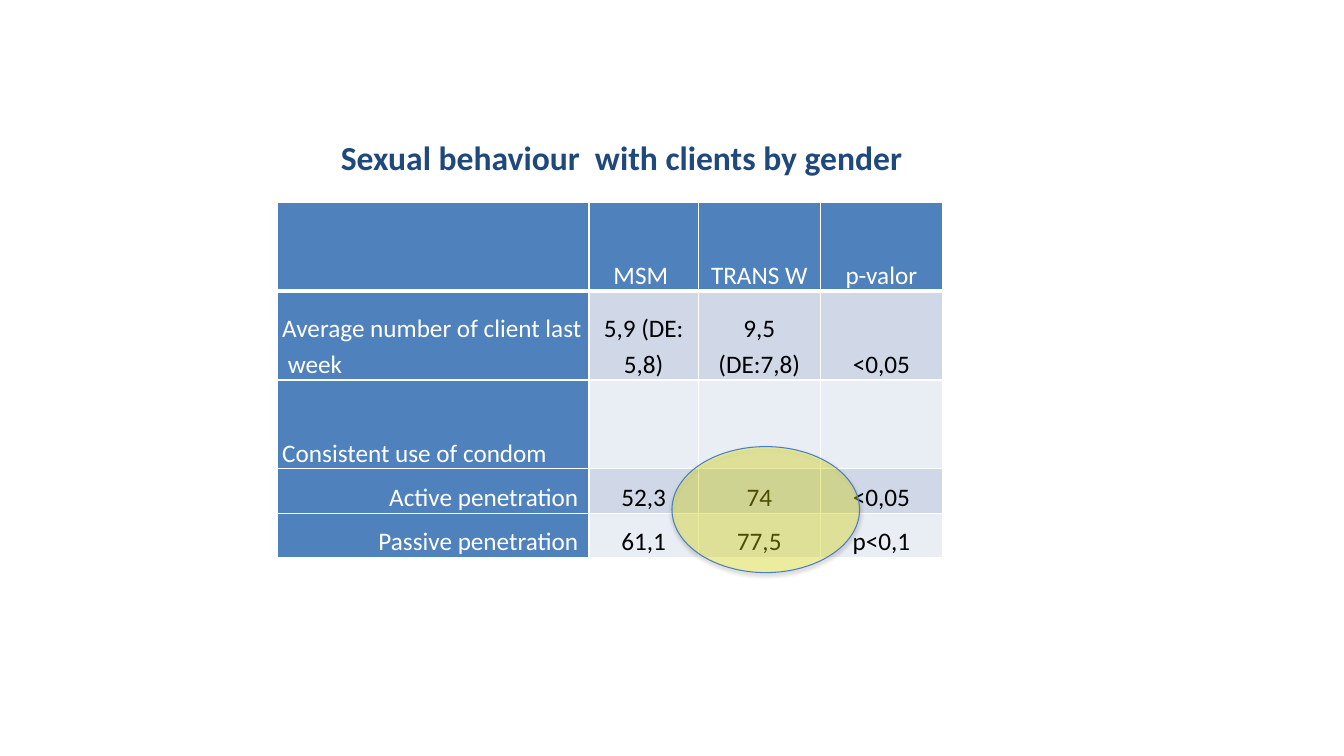
from lxml import etree
from pptx import Presentation
from pptx.dml.color import RGBColor
from pptx.enum import shapes, text
from pptx.oxml import ns
from pptx.util import Pt

WHITE = RGBColor(0xFF, 0xFF, 0xFF)
BLACK = RGBColor(0, 0, 0)
NAVY = RGBColor(0x1F, 0x49, 0x7D)
BLUE = RGBColor(0x4F, 0x81, 0xBD)
BAND_DARK = RGBColor(0xD0, 0xD8, 0xE8)
BAND_LIGHT = RGBColor(0xE9, 0xED, 0xF4)
YELLOW = RGBColor(0xFF, 0xFF, 0)
OUTLINE = RGBColor(0x4B, 0x7E, 0xBC)
LEFT, CENTER, RIGHT = text.PP_ALIGN.LEFT, text.PP_ALIGN.CENTER, text.PP_ALIGN.RIGHT


def write(frame, words, size=18, color=BLACK, bold=False, align=CENTER, spacing=1.0):
    paragraph = frame.paragraphs[0]
    paragraph.alignment = align
    paragraph.line_spacing = spacing
    run = paragraph.add_run()
    run.text = words
    run.font.name = "Calibri"
    run.font.size = Pt(size)
    run.font.bold = bold
    run.font.color.rgb = color


def add_color(parent, color, alpha=None):
    """Append an srgbClr element, with alpha in percent."""
    node = etree.SubElement(parent, ns.qn("a:srgbClr"), val=str(color))
    if alpha is not None:
        etree.SubElement(node, ns.qn("a:alpha"), val=str(alpha * 1000))


deck = Presentation()
deck.slide_width, deck.slide_height = Pt(960), Pt(540)
slide = deck.slides.add_slide(deck.slide_layouts[5])

title = slide.shapes.title
title.left, title.top, title.width, title.height = Pt(152), Pt(94.5), Pt(584), Pt(36)
title.text_frame.word_wrap = True
title.text_frame.auto_size = text.MSO_AUTO_SIZE.NONE
title.text_frame.vertical_anchor = text.MSO_ANCHOR.MIDDLE
write(title.text_frame, "Sexual behaviour  with clients by gender", size=24, color=NAVY, bold=True)

rows = [
    ["", "MSM ", "TRANS W", "p-valor"],
    ["Average number of client last  week", "5,9 (DE: 5,8)", "9,5 (DE:7,8)", "<0,05"],
    ["Consistent use of condom", "", "", ""],
    ["Active penetration ", "52,3", "74", "<0,05"],
    ["Passive penetration ", "61,1", "77,5", "p<0,1"],
]
label_aligns = [LEFT, LEFT, LEFT, RIGHT, RIGHT]
column_widths = [222.8, 78, 87.2, 87.2]
row_heights = [63.4, 63.4, 63.4, 31.7, 31.7]

behaviour = slide.shapes.add_table(
    len(rows), len(column_widths), Pt(198), Pt(144.7), Pt(sum(column_widths)), Pt(sum(row_heights))
).table
behaviour.first_row = behaviour.horz_banding = False
for column, width in zip(behaviour.columns, column_widths):
    column.width = Pt(width)

for r, values in enumerate(rows):
    behaviour.rows[r].height = Pt(row_heights[r])
    for c, value in enumerate(values):
        cell = behaviour.cell(r, c)
        heading = r == 0 or c == 0
        cell.margin_left = cell.margin_right = Pt(3.6)
        cell.margin_top = cell.margin_bottom = Pt(0)
        cell.vertical_anchor = text.MSO_ANCHOR.BOTTOM
        if value:
            write(cell.text_frame, value, color=WHITE if heading else BLACK,
                  align=label_aligns[r] if c == 0 else CENTER, spacing=1.15)
        for side in ("lnL", "lnR", "lnT", "lnB"):
            weight = 3 if r == 0 and side == "lnB" else 1
            border = etree.SubElement(cell._tc.get_or_add_tcPr(), ns.qn("a:" + side), w=str(Pt(weight)))
            add_color(etree.SubElement(border, ns.qn("a:solidFill")), WHITE)
        cell.fill.solid()
        cell.fill.fore_color.rgb = BLUE if heading else BAND_DARK if r % 2 else BAND_LIGHT

highlight = slide.shapes.add_shape(shapes.MSO_SHAPE.OVAL, Pt(480), Pt(319), Pt(134), Pt(90))
highlight.fill.solid()
highlight.fill.fore_color.rgb = YELLOW
fill_color = highlight._element.spPr.find(ns.qn("a:solidFill"))[0]
etree.SubElement(fill_color, ns.qn("a:alpha"), val="30000")
highlight.line.color.rgb = OUTLINE
highlight.line.width = Pt(0.75)
highlight.shadow.inherit = False
effects = highlight._element.spPr.find(ns.qn("a:effectLst"))
shadow = etree.SubElement(effects, ns.qn("a:outerShdw"), blurRad=str(Pt(3.1)), dist=str(Pt(1.8)),
                          dir="5400000", rotWithShape="0")
add_color(shadow, BLACK, alpha=35)

deck.save("out.pptx")
